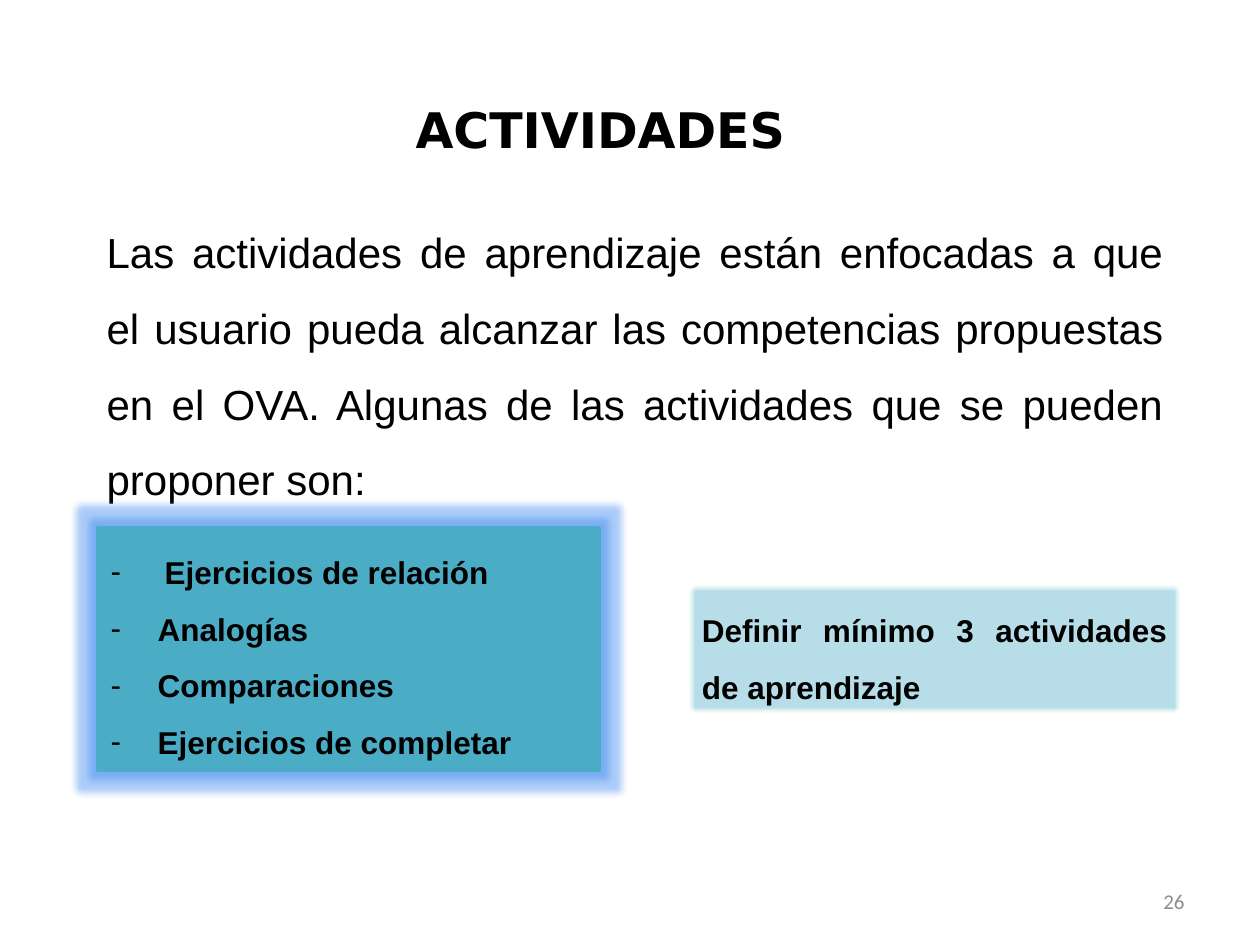
from lxml import etree
from pptx import Presentation
from pptx import util as u
from pptx.dml.color import RGBColor
from pptx.enum import shapes, text
from pptx.oxml.ns import qn

COLORS = {
    "black": "000000",
    "grey": "8C8C8C",
    "teal": "4BACC6",
    "pale": "B7DEE8",
    "green": "00B050",
    "glow": "2F80EE",
}
ALIGN = text.PP_ALIGN


def color(name):
    return RGBColor.from_string(COLORS[name])


class SlideBuilder:
    """Holds the text style and the current slide."""

    font = "Arial"
    spacing = 1.5

    def __init__(self, presentation):
        self.slide = presentation.slides.add_slide(presentation.slide_layouts[5])

    def add_words(self, paragraph, words, size, align, bold=False, ink="black",
                  font=None, spacing=None):
        paragraph.alignment = align
        paragraph.line_spacing = spacing
        run = paragraph.add_run()
        run.text = words
        run.font.size = u.Pt(size)
        run.font.bold = bold
        run.font.name = font or self.font
        run.font.color.rgb = color(ink)

    def title(self, box, words):
        shape = self.slide.shapes.title
        shape.left, shape.top, shape.width, shape.height = map(u.Cm, box)
        shape.text_frame.auto_size = text.MSO_AUTO_SIZE.NONE
        self.add_words(shape.text_frame.paragraphs[0], words, 28, ALIGN.CENTER,
                       bold=True, font="DejaVu Sans")

    def text_box(self, box, words, size, align, anchor=text.MSO_ANCHOR.TOP, **style):
        shape = self.slide.shapes.add_textbox(*map(u.Cm, box))
        frame = shape.text_frame
        frame.word_wrap = True
        frame.vertical_anchor = anchor
        self.add_words(frame.paragraphs[0], words, size, align, **style)

    def panel(self, box, fill, line):
        shape = self.slide.shapes.add_shape(shapes.MSO_SHAPE.RECTANGLE, *map(u.Cm, box))
        shape.shadow.inherit = False
        shape.fill.solid()
        shape.fill.fore_color.rgb = color(fill)
        shape.line.color.rgb = color(line)
        shape.line.width = u.Pt(2)
        shape.text_frame.word_wrap = True
        shape.text_frame.vertical_anchor = text.MSO_ANCHOR.TOP
        return shape

    def effect(self, shape, kind, radius):
        effects = shape._element.spPr.find(qn("a:effectLst"))
        return etree.SubElement(effects, qn(f"a:{kind}"), rad=str(u.Pt(radius)))

    def glow(self, shape, name, radius, alpha):
        glow = self.effect(shape, "glow", radius)
        tint = etree.SubElement(glow, qn("a:srgbClr"), val=COLORS[name])
        etree.SubElement(tint, qn("a:alpha"), val=str(alpha * 1000))

    def dash(self, paragraph, indent):
        properties = paragraph._p.get_or_add_pPr()
        properties.set("marL", str(u.Cm(indent)))
        properties.set("indent", str(-u.Cm(indent)))
        etree.SubElement(properties, qn("a:buFont"), typeface=self.font)
        etree.SubElement(properties, qn("a:buChar"), char="-")

    def dash_list(self, shape, items):
        frame = shape.text_frame
        for index, (words, indent) in enumerate(items):
            paragraph = frame.add_paragraph() if index else frame.paragraphs[0]
            self.dash(paragraph, indent)
            self.add_words(paragraph, words, 18, ALIGN.JUSTIFY, bold=True,
                           spacing=self.spacing)


def main():
    presentation = Presentation()
    presentation.slide_width = u.Cm(25.4)
    presentation.slide_height = u.Cm(19.05)
    builder = SlideBuilder(presentation)

    # Slide number
    builder.text_box((18.2, 17.66, 5.93, 1.01), "26", 12, ALIGN.RIGHT,
                     anchor=text.MSO_ANCHOR.MIDDLE, ink="grey", font="Calibri")

    # Title and introduction
    builder.title((1.5, 1.88, 21.2, 1.45), "ACTIVIDADES")
    builder.text_box(
        (1.9, 3.94, 21.8, 7.95),
        "Las actividades de aprendizaje están enfocadas a que el usuario pueda "
        "alcanzar las competencias propuestas en el OVA. Algunas de las "
        "actividades que se pueden proponer son:",
        24, ALIGN.JUSTIFY, spacing=builder.spacing)

    # Requirement with soft edges
    requirement = builder.panel((13.9, 11.81, 9.88, 2.57), "pale", "green")
    builder.effect(requirement, "softEdge", 2.5)
    builder.add_words(requirement.text_frame.paragraphs[0],
                      "Definir mínimo 3 actividades de aprendizaje", 18,
                      ALIGN.JUSTIFY, bold=True, spacing=builder.spacing)

    # Glowing list of activities
    activities = builder.panel((1.98, 10.64, 10.1, 4.88), "teal", "teal")
    builder.glow(activities, "glow", 8, 40)
    builder.dash_list(activities, [
        ("Ejercicios de relación", 1.09),
        ("Analogías", 0.95),
        ("Comparaciones", 0.95),
        ("Ejercicios de completar", 0.95),
    ])

    presentation.save("out.pptx")


if __name__ == "__main__":
    main()
